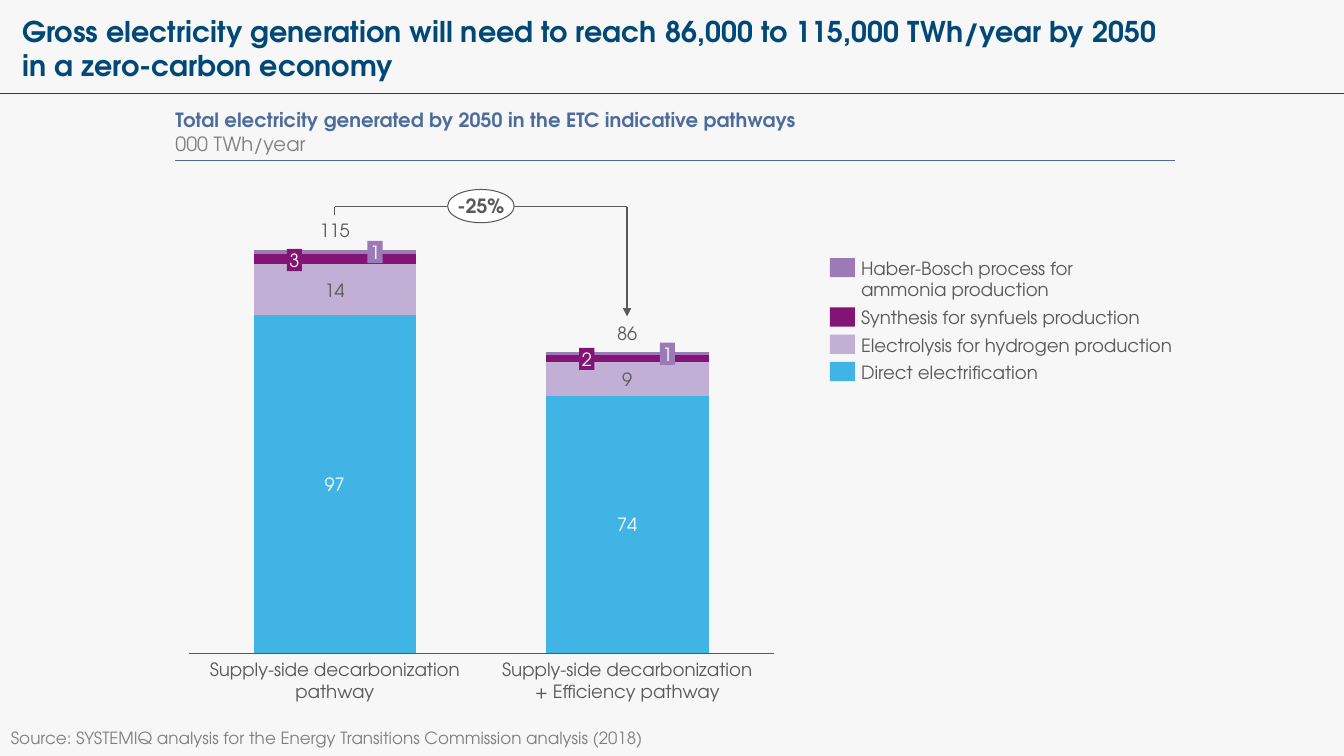
import pptx
import pptx.chart.data
import pptx.dml.color
import pptx.enum.chart
import pptx.enum.shapes
import pptx.enum.text
import pptx.oxml
import pptx.oxml.ns
import pptx.util
from dataclasses import dataclass

Inches = pptx.util.Inches
Pt = pptx.util.Pt
Shape = pptx.enum.shapes.MSO_SHAPE
Align = pptx.enum.text.PP_ALIGN
Anchor = pptx.enum.text.MSO_ANCHOR
NS = pptx.oxml.ns.nsdecls


@dataclass(frozen=True)
class Theme:
    font: str = "TeX Gyre Adventor"
    back: str = "F7F7F7"
    navy: str = "004876"
    blue: str = "4C6C9C"
    ink: str = "595959"
    gray: str = "808080"
    white: str = "FFFFFF"
    direct: str = "40B4E5"
    hydro: str = "C2AFD6"
    syn: str = "841376"
    haber: str = "9B7AB6"
    title: float = 20.4
    head: float = 14
    label: float = 13
    source: float = 12
    chart: float = 10


T = Theme()


def color(code):
    return pptx.dml.color.RGBColor.from_string(code)


def style(font, size, code, bold=False):
    font.name = T.font
    font.size = Pt(size)
    font.bold = bold
    font.color.rgb = color(code)


def write(frame, lines, align=Align.LEFT, anchor=Anchor.MIDDLE, pad=(0, 0, 0, 0), wrap=False):
    frame.auto_size = pptx.enum.text.MSO_AUTO_SIZE.NONE
    frame.word_wrap = wrap
    frame.vertical_anchor = anchor
    frame.margin_left, frame.margin_top, frame.margin_right, frame.margin_bottom = map(Inches, pad)
    for i, (text, size, code, bold) in enumerate(lines):
        para = frame.paragraphs[0] if i == 0 else frame.add_paragraph()
        para.text = text
        para.alignment = align
        style(para.font, size, code, bold)


def add_text(slide, box, lines, **opts):
    item = slide.shapes.add_textbox(*map(Inches, box))
    write(item.text_frame, lines, **opts)


def add_block(slide, kind, box, fill, line=None):
    item = slide.shapes.add_shape(kind, *map(Inches, box))
    item.shadow.inherit = False
    item.fill.solid()
    item.fill.fore_color.rgb = color(fill)
    if line:
        item.line.color.rgb = color(line)
        item.line.width = Pt(0.75)
    else:
        item.line.fill.background()
    return item


def add_line(slide, start, end, code, width, arrow=False):
    line = slide.shapes.add_connector(
        pptx.enum.shapes.MSO_CONNECTOR.STRAIGHT, *map(Inches, start + end))
    line.line.color.rgb = color(code)
    line.line.width = Pt(width)
    if arrow:
        line.line._get_or_add_ln().append(
            pptx.oxml.parse_xml(f'<a:tailEnd {NS("a")} type="triangle"/>'))
    line._element.spPr.append(pptx.oxml.parse_xml(f'<a:effectLst {NS("a")}/>'))


def add_label(slide, text, center, top, code, fill=None, anchor=Anchor.MIDDLE):
    width = 0.05 + 0.1 * len(text)
    box = (center - width / 2, top, width, 0.22)
    lines = [(text, T.label, code, False)]
    opts = dict(align=Align.CENTER, anchor=anchor, pad=(0.03, 0, 0.03, 0))
    if fill:
        write(add_block(slide, Shape.RECTANGLE, box, fill).text_frame, lines, **opts)
    else:
        add_text(slide, box, lines, **opts)


def add_bars(slide):
    series = [((100, 76), T.direct), ((15, 10), T.hydro), ((3, 2), T.syn), ((1, 1), T.haber)]
    data = pptx.chart.data.CategoryChartData()
    data.categories = ["1", "2"]
    for i, (vals, _) in enumerate(series, 1):
        data.add_series(f"Series {i}", vals)
    chart = slide.shapes.add_chart(
        pptx.enum.chart.XL_CHART_TYPE.COLUMN_STACKED,
        Inches(1.78), Inches(2.39), Inches(5.99), Inches(4.18), data).chart
    style(chart.font, T.chart, T.ink)
    chart.has_legend = False
    chart.has_title = False
    plot = chart.plots[0]
    plot.gap_width = 80
    plot.overlap = 100
    plot.vary_by_categories = False
    for bar, (_, code) in zip(plot.series, series):
        bar.format.fill.solid()
        bar.format.fill.fore_color.rgb = color(code)
    base = chart.category_axis
    base.tick_label_position = pptx.enum.chart.XL_TICK_LABEL_POSITION.NONE
    base.major_tick_mark = pptx.enum.chart.XL_TICK_MARK.NONE
    base.format.line.color.rgb = color(T.ink)
    base.format.line.width = Pt(0.75)
    scale = chart.value_axis
    scale.minimum_scale = 0
    scale.maximum_scale = 119
    scale.has_major_gridlines = False
    scale.visible = False
    area = chart._chartSpace.chart.plotArea
    for old in area.findall(pptx.oxml.ns.qn("c:layout")):
        area.remove(old)
    sides = "".join(f'<c:{k} val="{v}"/>' for k, v in (
        ("xMode", "edge"), ("yMode", "edge"),
        ("x", 0.015), ("y", 0.022), ("w", 0.97), ("h", 0.957)))
    area.insert(0, pptx.oxml.parse_xml(
        f'<c:layout {NS("c")}><c:manualLayout><c:layoutTarget val="inner"/>'
        f'{sides}</c:manualLayout></c:layout>'))


def add_column(slide, center, name, total, haber, syn, hydro, direct):
    add_label(slide, *haber, T.white, T.haber)
    add_label(slide, *syn, T.white, T.syn)
    add_label(slide, *hydro, T.ink)
    add_label(slide, *direct, T.white)
    add_label(slide, *total, T.ink, anchor=Anchor.BOTTOM)
    add_text(slide, (center - 1.25, 6.53, 2.5, 0.43), [(name, T.label, T.ink, False)],
             align=Align.CENTER, anchor=Anchor.TOP)


def add_columns(slide):
    columns = [
        (3.32, "Supply-side decarbonization\npathway",
         ("115", 2.17), ("1", 2.39), ("3", 2.47), ("14", 2.77), ("97", 4.69)),
        (6.22, "Supply-side decarbonization\n+ Efficiency pathway",
         ("86", 3.19), ("1", 3.4), ("2", 3.45), ("9", 3.65), ("74", 5.09)),
    ]
    shifts = (0, 0.4, -0.4, 0, 0)
    for center, name, *labels in columns:
        spots = [(text, center + shift, top) for (text, top), shift in zip(labels, shifts)]
        add_column(slide, center, name, *spots)


def add_change(slide):
    add_line(slide, (3.32, 2.13), (3.32, 2.05), T.ink, 1)
    add_line(slide, (3.32, 2.05), (6.22, 2.05), T.ink, 1)
    add_line(slide, (6.22, 2.05), (6.22, 3.14), T.ink, 1, arrow=True)
    oval = add_block(slide, Shape.OVAL, (4.44, 1.88, 0.66, 0.33), T.white, T.ink)
    write(oval.text_frame, [("-25%", T.head, T.ink, True)], align=Align.CENTER)


def add_legend(slide):
    items = [
        ("Haber-Bosch process for\nammonia production", 2.55, 0.43, T.haber),
        ("Synthesis for synfuels production", 3.04, 0.22, T.syn),
        ("Electrolysis for hydrogen production", 3.31, 0.22, T.hydro),
        ("Direct electrification", 3.58, 0.22, T.direct),
    ]
    for text, top, height, code in items:
        add_block(slide, Shape.RECTANGLE, (8.23, top + 0.01, 0.25, 0.19), code)
        add_text(slide, (8.54, top, 3.11, height), [(text, T.label, T.ink, False)])


def add_title(slide, text):
    title = slide.shapes.title
    title.left, title.top, title.width, title.height = map(Inches, (0.22, 0.14, 11.52, 0.69))
    write(title.text_frame, [(text, T.title, T.navy, True)], anchor=Anchor.TOP, wrap=True)
    add_line(slide, (0, 0.93), (13.33, 0.93), T.navy, 0.75)


def main():
    deck = pptx.Presentation()
    deck.slide_width = Inches(13.33)
    deck.slide_height = Inches(7.5)
    slide = deck.slides.add_slide(deck.slide_layouts[5])
    slide.background.fill.solid()
    slide.background.fill.fore_color.rgb = color(T.back)
    add_title(slide, "Gross electricity generation will need to reach 86,000 to "
                     "115,000 TWh/year by 2050 in a zero-carbon economy")
    add_text(slide, (1.74, 1.07, 9.91, 0.49), [
        ("Total electricity generated by 2050 in the ETC indicative pathways", T.head, T.blue, True),
        ("000 TWh/year", T.head, T.gray, False),
    ], anchor=Anchor.BOTTOM, pad=(0, 0, 0, 0.02), wrap=True)
    add_line(slide, (1.74, 1.59), (11.65, 1.59), T.blue, 0.75)
    add_bars(slide)
    add_change(slide)
    add_columns(slide)
    add_legend(slide)
    add_text(slide, (0.01, 7.17, 12.88, 0.3), [
        ("Source: SYSTEMIQ analysis for the Energy Transitions Commission analysis (2018)",
         T.source, T.gray, False),
    ], anchor=Anchor.TOP, pad=(0.1, 0.05, 0.1, 0.05), wrap=True)
    deck.save("out.pptx")


if __name__ == "__main__":
    main()
